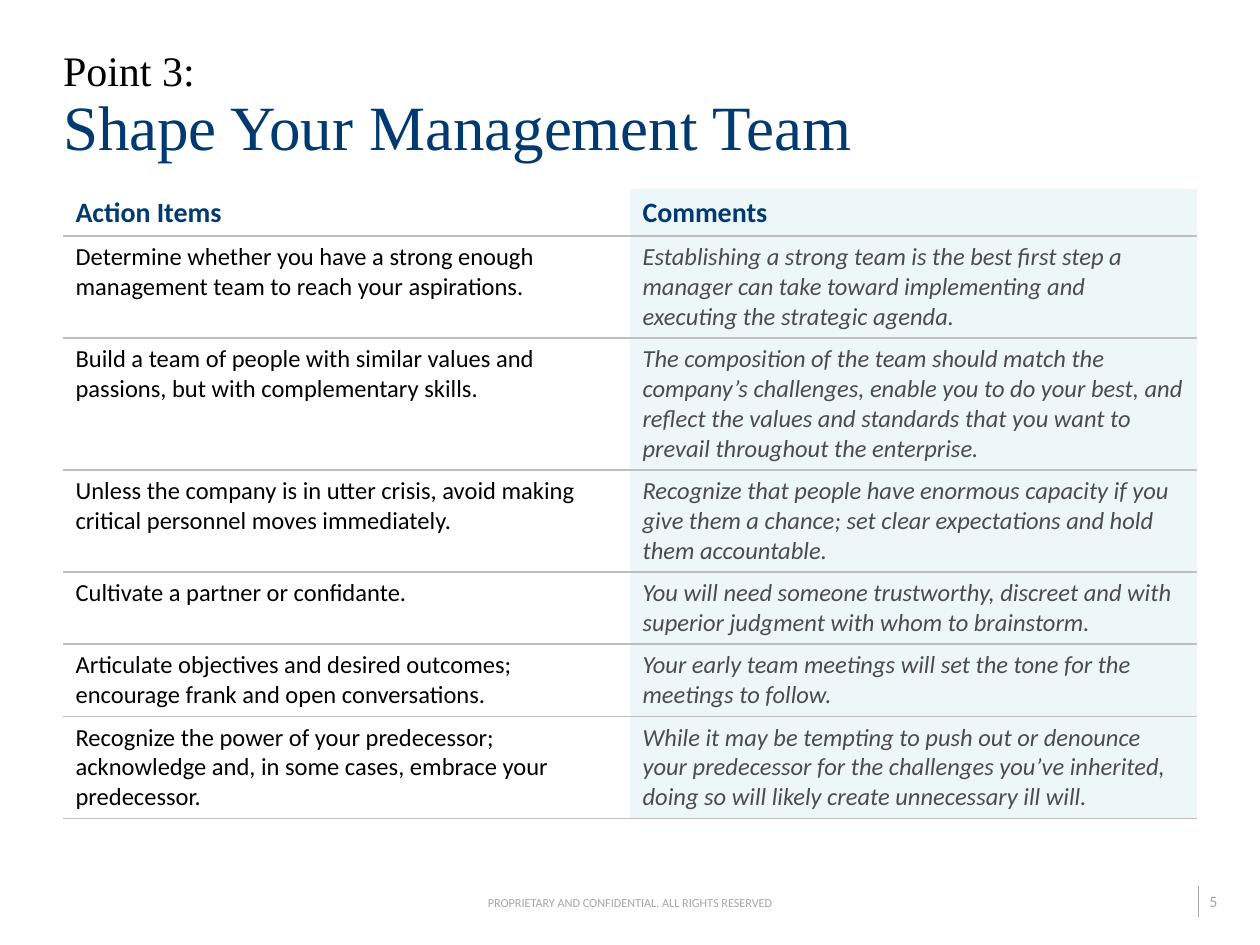
import pptx
import pptx.util
import pptx.dml.color
import pptx.enum.text
import pptx.enum.shapes
import pptx.oxml
import pptx.oxml.ns

Inches, Pt = pptx.util.Inches, pptx.util.Pt
ANCHOR, ALIGN = pptx.enum.text.MSO_ANCHOR, pptx.enum.text.PP_ALIGN

COLORS = {"navy": "003A70", "black": "000000", "comment": "4C4C4E",
          "tint": "EDF6F8", "rule": "BFBFBF", "footer": "A6A6A6", "divider": "A8A3AB"}
HEADING, BODY = "Times New Roman", "Calibri"

# Content
TITLE = [("Point 3: ", 24, "black"), ("Shape Your Management Team", 36, "navy")]
HEADERS = ("Action Items", "Comments")
ITEMS = [
    ("Determine whether you have a strong enough management team to reach your aspirations.",
     "Establishing a strong team is the best first step a manager can take toward "
     "implementing and executing the strategic agenda."),
    ("Build a team of people with similar values and passions, but with complementary skills.",
     "The composition of the team should match the company’s challenges, enable you to do "
     "your best, and reflect the values and standards that you want to prevail throughout "
     "the enterprise."),
    ("Unless the company is in utter crisis, avoid making critical personnel moves immediately.",
     "Recognize that people have enormous capacity if you give them a chance; set clear "
     "expectations and hold them accountable."),
    ("Cultivate a partner or confidante.",
     "You will need someone trustworthy, discreet and with superior judgment with whom to "
     "brainstorm."),
    ("Articulate objectives and desired outcomes; encourage frank and open conversations.",
     "Your early team meetings will set the tone for the meetings to follow."),
    ("Recognize the power of your predecessor; acknowledge and, in some cases, embrace your "
     "predecessor.",
     "While it may be tempting to push out or denounce your predecessor for the challenges "
     "you’ve inherited, doing so will likely create unnecessary ill will."),
]
ROW_HEIGHTS = (0.32, 0.71, 0.92, 0.71, 0.5, 0.5, 0.71)
# text, box, size, alignment, anchor, margins (left, top, right, bottom)
FOOTERS = [
    ("PROPRIETARY AND CONFIDENTIAL. ALL RIGHTS RESERVED", (3.86, 7.1, 2.28, 0.12), 7,
     ALIGN.CENTER, ANCHOR.MIDDLE, (0, 0, 0, 0)),
    ("5", (9.5, 7.03, 0.4, 0.25), 9, ALIGN.LEFT, ANCHOR.TOP, (0.1, 0.05, 0, 0.05)),
]


def rgb(name):
    return pptx.dml.color.RGBColor.from_string(COLORS[name])


def add_run(p, text, size, color, font=BODY, bold=False, italic=False):
    r = p.add_run()
    r.text = text
    r.font.name, r.font.size = font, Pt(size)
    r.font.bold, r.font.italic = bold, italic
    r.font.color.rgb = rgb(color)


def set_margins(tf, margins):
    tf.margin_left, tf.margin_top, tf.margin_right, tf.margin_bottom = map(Inches, margins)


def add_bottom_rule(cell):
    cell._tc.get_or_add_tcPr().append(pptx.oxml.parse_xml(
        f'<a:lnB {pptx.oxml.ns.nsdecls("a")} w="{Pt(1)}"><a:solidFill>'
        f'<a:srgbClr val="{COLORS["rule"]}"/></a:solidFill></a:lnB>'))


prs = pptx.Presentation()
prs.slide_width, prs.slide_height = Inches(10), Inches(7.5)
s = prs.slides.add_slide(prs.slide_layouts.get_by_name("Title Only"))

# Title
title = s.shapes.title
title.left, title.top, title.width, title.height = map(Inches, (0.5, 0.25, 9, 1.1))
tf = title.text_frame
tf.word_wrap, tf.vertical_anchor = True, ANCHOR.BOTTOM
tf.auto_size = pptx.enum.text.MSO_AUTO_SIZE.NONE
set_margins(tf, (0, 0.05, 0, 0.05))
p = tf.paragraphs[0]
p.alignment, p.line_spacing = ALIGN.LEFT, 0.9
for i, (text, size, color) in enumerate(TITLE):
    if i:
        p.add_line_break()
    add_run(p, text, size, color, HEADING)

# Table of actions and comments, ruled below every row
rows = [HEADERS] + ITEMS
table = s.shapes.add_table(len(rows), len(HEADERS), Inches(0.5), Inches(1.5),
                           Inches(9), Inches(sum(ROW_HEIGHTS))).table
table.first_row = table.horz_banding = False
style = table._tbl.tblPr.find(pptx.oxml.ns.qn("a:tableStyleId"))
style.text = "{2D5ABB26-0587-4C30-8999-92F81FD0307C}"  # no style, no grid
for i, (row, height) in enumerate(zip(rows, ROW_HEIGHTS)):
    table.rows[i].height = Inches(height)
    for j, text in enumerate(row):
        cell = table.cell(i, j)
        add_bottom_rule(cell)
        if j == 1:
            cell.fill.solid()
            cell.fill.fore_color.rgb = rgb("tint")
        else:
            cell.fill.background()
        p = cell.text_frame.paragraphs[0]
        if i == 0:
            cell.vertical_anchor = ANCHOR.MIDDLE
            add_run(p, text, 16, "navy", bold=True)
        else:
            add_run(p, text, 14, ("black", "comment")[j], italic=j == 1)

# Footer and page number
for text, box, size, align, anchor, margins in FOOTERS:
    tf = s.shapes.add_textbox(*map(Inches, box)).text_frame
    tf.word_wrap, tf.vertical_anchor = False, anchor
    set_margins(tf, margins)
    tf.paragraphs[0].alignment = align
    add_run(tf.paragraphs[0], text, size, "footer")

# Divider beside the page number
line = s.shapes.add_connector(pptx.enum.shapes.MSO_CONNECTOR.STRAIGHT,
                              *map(Inches, (9.51, 7.03, 9.51, 7.28)))
line.line.color.rgb, line.line.width = rgb("divider"), Pt(0.5)
line._element.spPr.append(pptx.oxml.parse_xml(
    f'<a:effectLst {pptx.oxml.ns.nsdecls("a")}/>'))

prs.save("out.pptx")
